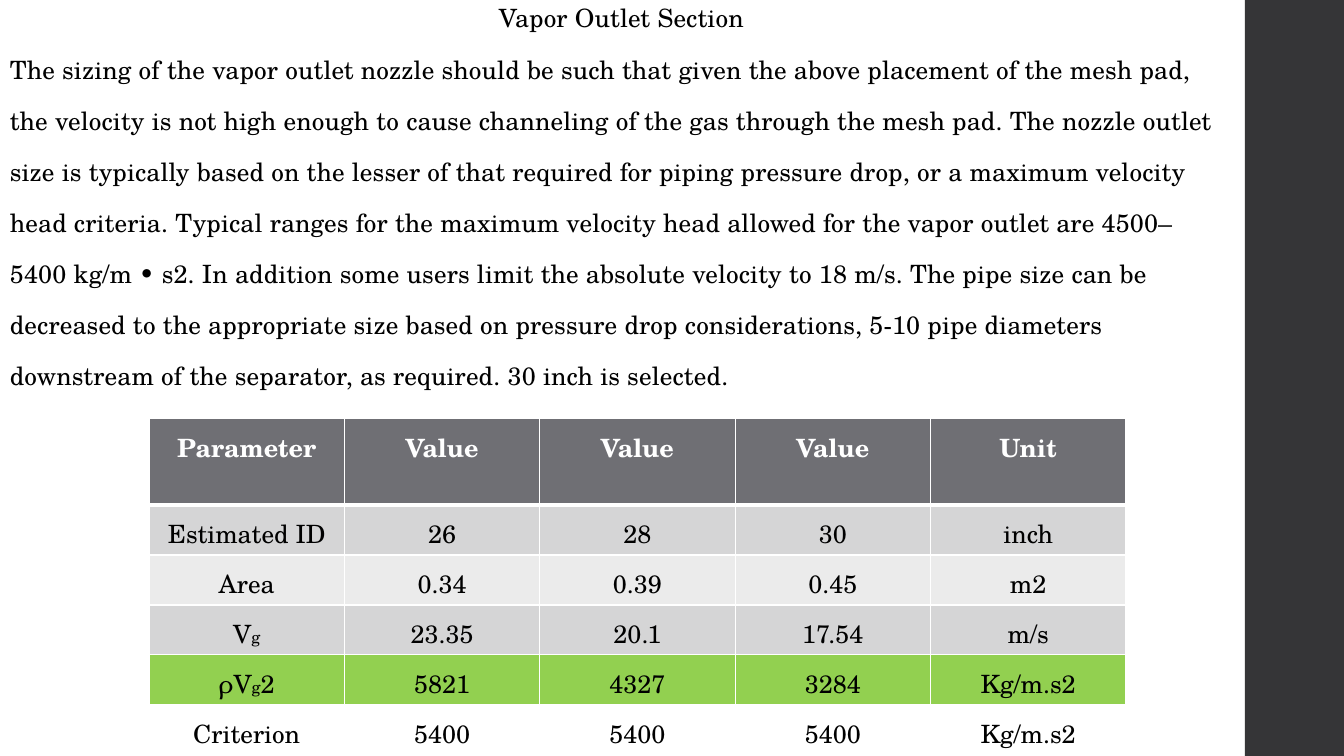
from lxml import etree
from pptx import Presentation
from pptx import util as u
from pptx.dml.color import RGBColor
from pptx.enum import shapes, text
from pptx.oxml.ns import qn

PX = 9071.43
FONT = "TeX Gyre Schola"
BLACK = RGBColor(0x00, 0x00, 0x00)
WHITE = RGBColor(0xFF, 0xFF, 0xFF)
CHARCOAL = RGBColor(0x35, 0x35, 0x37)
SLATE = RGBColor(0x6F, 0x6F, 0x74)
GREY = RGBColor(0xD5, 0xD5, 0xD6)
PALE = RGBColor(0xEB, 0xEB, 0xEB)
GREEN = RGBColor(0x92, 0xD0, 0x50)

TITLE = "Vapor Outlet Section"
BODY = [
    "The sizing of the vapor outlet nozzle should be such that given the above placement of the mesh pad,",
    "the velocity is not high enough to cause channeling of the gas through the mesh pad. The nozzle outlet",
    "size is typically based on the lesser of that required for piping pressure drop, or a maximum velocity",
    "head criteria. Typical ranges for the maximum velocity head allowed for the vapor outlet are 4500–",
    "5400 kg/m • s2. In addition some users limit the absolute velocity to 18 m/s. The pipe size can be",
    "decreased to the appropriate size based on pressure drop considerations, 5-10 pipe diameters",
    "downstream of the separator, as required. 30 inch is selected.",
]
ROWS = [
    (SLATE, ["Parameter", "Value", "Value", "Value", "Unit"]),
    (GREY, ["Estimated ID", "26", "28", "30", "inch"]),
    (PALE, ["Area", "0.34", "0.39", "0.45", "m2"]),
    (GREY, ["V|g", "23.35", "20.1", "17.54", "m/s"]),
    (GREEN, ["ρV|g|2", "5821", "4327", "3284", "Kg/m.s2"]),
    (WHITE, ["Criterion", "5400", "5400", "5400", "Kg/m.s2"]),
]


def px(n):
    """Turn pixels into EMU."""
    return u.Emu(round(n * PX))


def write(p, content, color=BLACK, bold=False, center=False, spacing=None):
    """Fill a paragraph; every second part between bars is set small."""
    p.alignment = text.PP_ALIGN.CENTER if center else text.PP_ALIGN.LEFT
    for i, part in enumerate(content.split("|")):
        r = p.add_run()
        r.text = part
        r.font.name = FONT
        r.font.size = u.Pt(12 if i % 2 else 18)
        r.font.bold = bold
        r.font.color.rgb = color
        if spacing:
            r.font._element.set("spc", str(spacing))


def add_sidebar(s):
    """Draw the dark band on the right edge."""
    sp = s.shapes.add_shape(shapes.MSO_SHAPE.RECTANGLE, px(1245), 0, px(99), px(756))
    sp.shadow.inherit = False
    sp.fill.solid()
    sp.fill.fore_color.rgb = CHARCOAL
    sp.line.fill.background()


def add_body(s):
    """Add the heading and the running text."""
    tf = s.shapes.add_textbox(0, 0, px(1243), px(756)).text_frame
    tf.word_wrap = True
    for i, line in enumerate([TITLE] + BODY):
        p = tf.add_paragraph() if i else tf.paragraphs[0]
        p.line_spacing = 0.95
        p.space_before = u.Pt(14)
        p.space_after = u.Pt(2)
        write(p, line, center=i == 0, spacing=10)


def add_borders(cell, widths):
    """Give a cell white borders of the given widths in points."""
    tcPr = cell._tc.get_or_add_tcPr()
    for side, width in widths.items():
        ln = etree.SubElement(tcPr, qn(f"a:ln{side}"), w=str(u.Pt(width)))
        fill = etree.SubElement(ln, qn("a:solidFill"))
        etree.SubElement(fill, qn("a:srgbClr"), val=str(WHITE))


def add_table(s):
    """Add the nozzle sizing table."""
    n = len(ROWS[0][1])
    tb = s.shapes.add_table(len(ROWS), n, px(149), px(418), px(977), px(337)).table
    tb.first_row = tb.horz_banding = False
    for col in tb.columns:
        col.width = px(977 / n)
    for i, (fill, values) in enumerate(ROWS):
        header = i == 0
        tb.rows[i].height = px(87 if header else 50)
        for j, value in enumerate(values):
            cell = tb.cell(i, j)
            add_borders(cell, {"L": 1, "R": 1, "T": 3 if i == 1 else 1, "B": 3 if header else 1})
            cell.fill.solid()
            cell.fill.fore_color.rgb = fill
            cell.margin_top = px(10)
            cell.margin_bottom = px(5)
            write(cell.text_frame.paragraphs[0], value, center=True,
                  color=WHITE if header else BLACK, bold=header)


def main():
    """Build and save the slide."""
    prs = Presentation()
    prs.slide_width, prs.slide_height = px(1344), px(756)
    s = prs.slides.add_slide(prs.slide_layouts[6])
    add_sidebar(s)
    add_body(s)
    add_table(s)
    prs.save("out.pptx")


if __name__ == "__main__":
    main()
